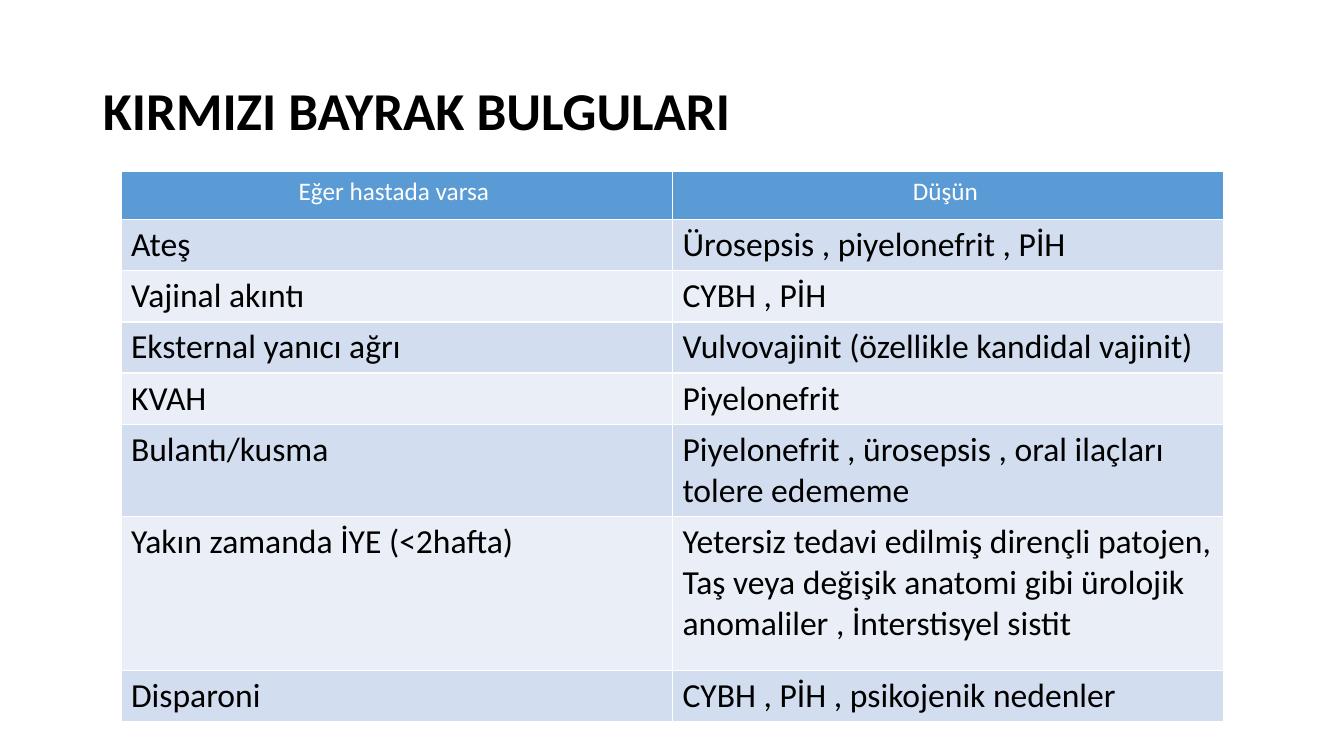
"""Build the slide of red flag findings and the conditions they suggest."""
from dataclasses import dataclass

from pptx import Presentation
from pptx.dml.color import RGBColor
from pptx.enum.text import MSO_ANCHOR, MSO_AUTO_SIZE, PP_ALIGN
from pptx.util import Inches, Pt


@dataclass(frozen=True)
class Theme:
    font: str = "Calibri"
    black: str = "000000"
    white: str = "FFFFFF"
    header: str = "5B9BD5"
    bands: tuple = ("EAEFF7", "D2DEEF")
    title_size: int = 38
    header_size: int = 18
    body_size: int = 24


theme = Theme()


def write(frame, text, size, color=theme.black, bold=False, align=PP_ALIGN.LEFT, spacing=1.0):
    frame.text = text
    for para in frame.paragraphs:
        para.alignment = align
        para.line_spacing = spacing
        for span in para.runs:
            span.font.name = theme.font
            span.font.size = Pt(size)
            span.font.bold = bold
            span.font.color.rgb = RGBColor.from_string(color)


findings = [
    ("Eğer hastada varsa ", "Düşün ", 0.48),
    ("Ateş", "Ürosepsis , piyelonefrit , PİH", 0.48),
    ("Vajinal akıntı", "CYBH , PİH", 0.48),
    ("Eksternal yanıcı ağrı", "Vulvovajinit (özellikle kandidal vajinit)", 0.48),
    ("KVAH", "Piyelonefrit", 0.48),
    ("Bulantı/kusma", "Piyelonefrit , ürosepsis , oral ilaçları tolere edememe", 0.83),
    (
        "Yakın zamanda İYE (<2hafta)",
        "Yetersiz tedavi edilmiş dirençli patojen,\n"
        "Taş veya değişik anatomi gibi ürolojik anomaliler , İnterstisyel sistit",
        1.53,
    ),
    ("Disparoni", "CYBH , PİH , psikojenik nedenler", 0.48),
]

deck = Presentation()
deck.slide_width, deck.slide_height = Inches(13.33), Inches(7.5)
page = deck.slides.add_slide(deck.slide_layouts[5])

title = page.shapes.title
title.left, title.top = Inches(0.92), Inches(0.4)
title.width, title.height = Inches(11.5), Inches(1.45)
title.text_frame.auto_size = MSO_AUTO_SIZE.NONE
title.text_frame.vertical_anchor = MSO_ANCHOR.MIDDLE
write(title.text_frame, "KIRMIZI BAYRAK BULGULARI", theme.title_size, bold=True, spacing=0.9)

table = page.shapes.add_table(
    len(findings), 2, Inches(1.2), Inches(1.7), Inches(10.94), Inches(5.24)
).table

for row_index, (finding, diagnosis, height) in enumerate(findings):
    table.rows[row_index].height = Inches(height)
    for column_index, text in enumerate((finding, diagnosis)):
        cell = table.cell(row_index, column_index)
        cell.fill.solid()
        if row_index == 0:
            fill = theme.header
            write(cell.text_frame, text, theme.header_size, color=theme.white, align=PP_ALIGN.CENTER)
        else:
            fill = theme.bands[row_index % 2]
            write(cell.text_frame, text, theme.body_size)
        cell.fill.fore_color.rgb = RGBColor.from_string(fill)

deck.save("out.pptx")
